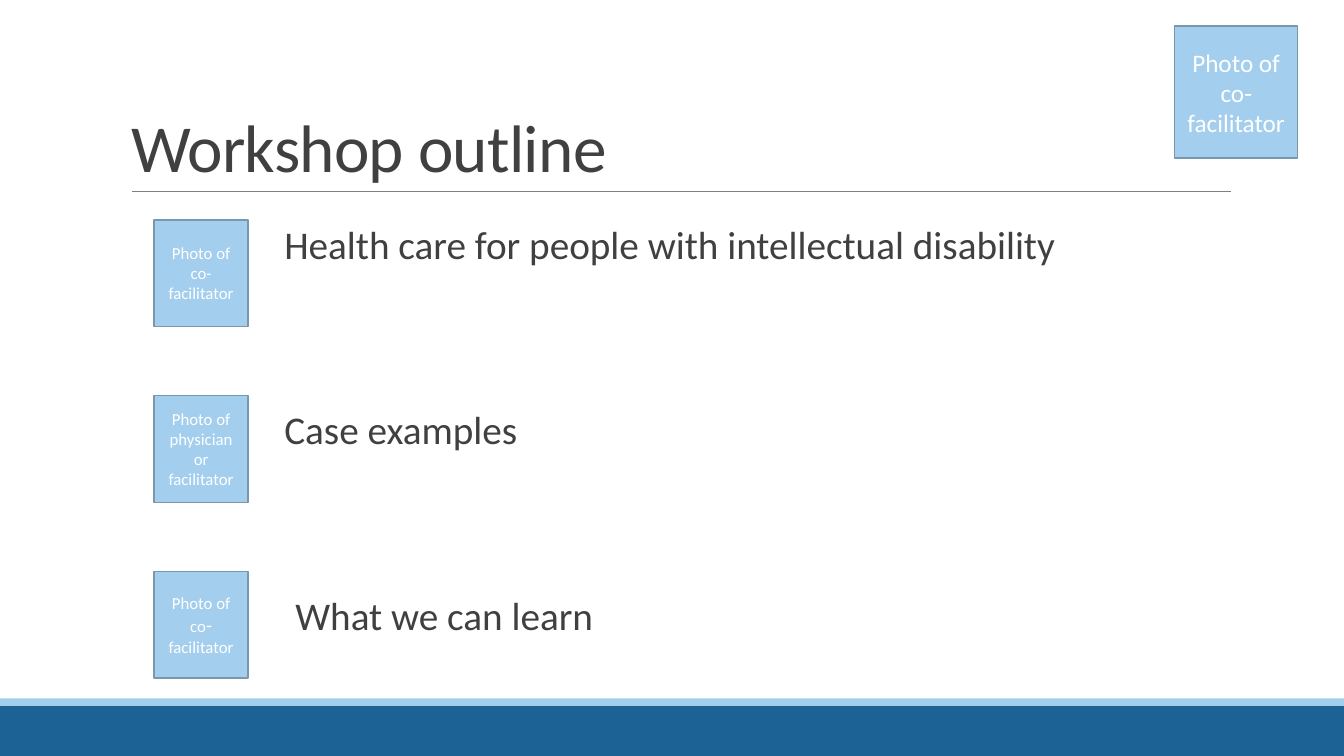
from lxml.etree import SubElement
from pptx import Presentation
from pptx.dml.color import RGBColor
from pptx.enum.shapes import MSO_CONNECTOR, MSO_SHAPE
from pptx.enum.text import MSO_ANCHOR, MSO_AUTO_SIZE, PP_ALIGN
from pptx.oxml.ns import qn
from pptx.util import Inches, Pt

COLORS = {
    "navy": "1C6294",
    "sky": "A3CEED",
    "outline": "7998AF",
    "rule": "808080",
    "text": "404040",
    "white": "FFFFFF",
}
FONT = "Calibri"
TOPICS = [
    ("Health care for people with intellectual disability", 12, 0),
    ("Case examples", 100, 0),
    ("What we can learn", 100, 0.11),
]
SPEAKERS = [
    [("Photo of co-facilitator", 12)],
    [("Photo of physician or facilitator", 12)],
    [("Photo of co", 12), ("-", 14), ("facilitator", 12)],
]


def color(name):
    return RGBColor.from_string(COLORS[name])


def place(shape, left, top, width, height):
    shape.left, shape.top = Inches(left), Inches(top)
    shape.width, shape.height = Inches(width), Inches(height)


def add_run(paragraph, text, size, color_name):
    run = paragraph.add_run()
    run.text = text
    run.font.name = FONT
    run.font.size = Pt(size)
    run.font.color.rgb = color(color_name)
    return run


def add_rectangle(slide, left, top, width, height, fill, line=None):
    shape = slide.shapes.add_shape(
        MSO_SHAPE.RECTANGLE, Inches(left), Inches(top), Inches(width), Inches(height)
    )
    shape.shadow.inherit = False
    shape.fill.solid()
    shape.fill.fore_color.rgb = color(fill)
    if line:
        shape.line.color.rgb = color(line)
        shape.line.width = Pt(1.25)
    else:
        shape.line.fill.background()
    return shape


def add_photo_box(slide, left, top, width, height, runs):
    shape = add_rectangle(slide, left, top, width, height, "sky", "outline")
    frame = shape.text_frame
    frame.word_wrap = True
    frame.vertical_anchor = MSO_ANCHOR.MIDDLE
    paragraph = frame.paragraphs[0]
    paragraph.alignment = PP_ALIGN.CENTER
    for text, size in runs:
        add_run(paragraph, text, size, "white")


def add_rule(slide, left, right, top):
    connector = slide.shapes.add_connector(
        MSO_CONNECTOR.STRAIGHT, Inches(left), Inches(top), Inches(right), Inches(top)
    )
    connector.line.color.rgb = color("rule")
    connector.line.width = Pt(0.5)
    SubElement(connector._element.spPr, qn("a:effectLst"))


def fill_title(title, text):
    place(title, 1.2, 0.31, 11, 1.59)
    frame = title.text_frame
    frame.auto_size = MSO_AUTO_SIZE.NONE
    frame.vertical_anchor = MSO_ANCHOR.BOTTOM
    paragraph = frame.paragraphs[0]
    paragraph.alignment = PP_ALIGN.LEFT
    paragraph.line_spacing = 0.85
    run = add_run(paragraph, text, 48, "text")
    run.font._element.set("spc", "-50")


def fill_topics(body):
    place(body, 2.82, 2.19, 9.59, 4.54)
    frame = body.text_frame
    frame.auto_size = MSO_AUTO_SIZE.NONE
    frame.margin_left = frame.margin_right = 0
    for index, (text, space_before, indent) in enumerate(TOPICS):
        paragraph = frame.add_paragraph() if index else frame.paragraphs[0]
        paragraph.line_spacing = 0.9
        paragraph.space_before = Pt(space_before)
        paragraph.space_after = Pt(2)
        properties = paragraph._p.get_or_add_pPr()
        properties.set("marL", str(Inches(indent)))
        properties.set("indent", "0")
        SubElement(properties, qn("a:buNone"))
        add_run(paragraph, text, 28, "text")


def main():
    presentation = Presentation()
    presentation.slide_width = Inches(13.33)
    presentation.slide_height = Inches(7.5)
    slide = presentation.slides.add_slide(presentation.slide_layouts[1])

    add_rectangle(slide, 0, 7, 13.33, 0.5, "navy")
    add_rectangle(slide, 0, 6.93, 13.33, 0.07, "sky")
    add_rule(slide, 1.31, 12.21, 1.9)
    fill_title(slide.shapes.title, "Workshop outline")
    fill_topics(slide.placeholders[1])
    add_photo_box(slide, 11.65, 0.26, 1.22, 1.31, [("Photo of co-facilitator", 18)])
    for index, runs in enumerate(SPEAKERS):
        add_photo_box(slide, 1.53, 2.18 + 1.745 * index, 0.93, 1.06, runs)

    presentation.save("out.pptx")


if __name__ == "__main__":
    main()
